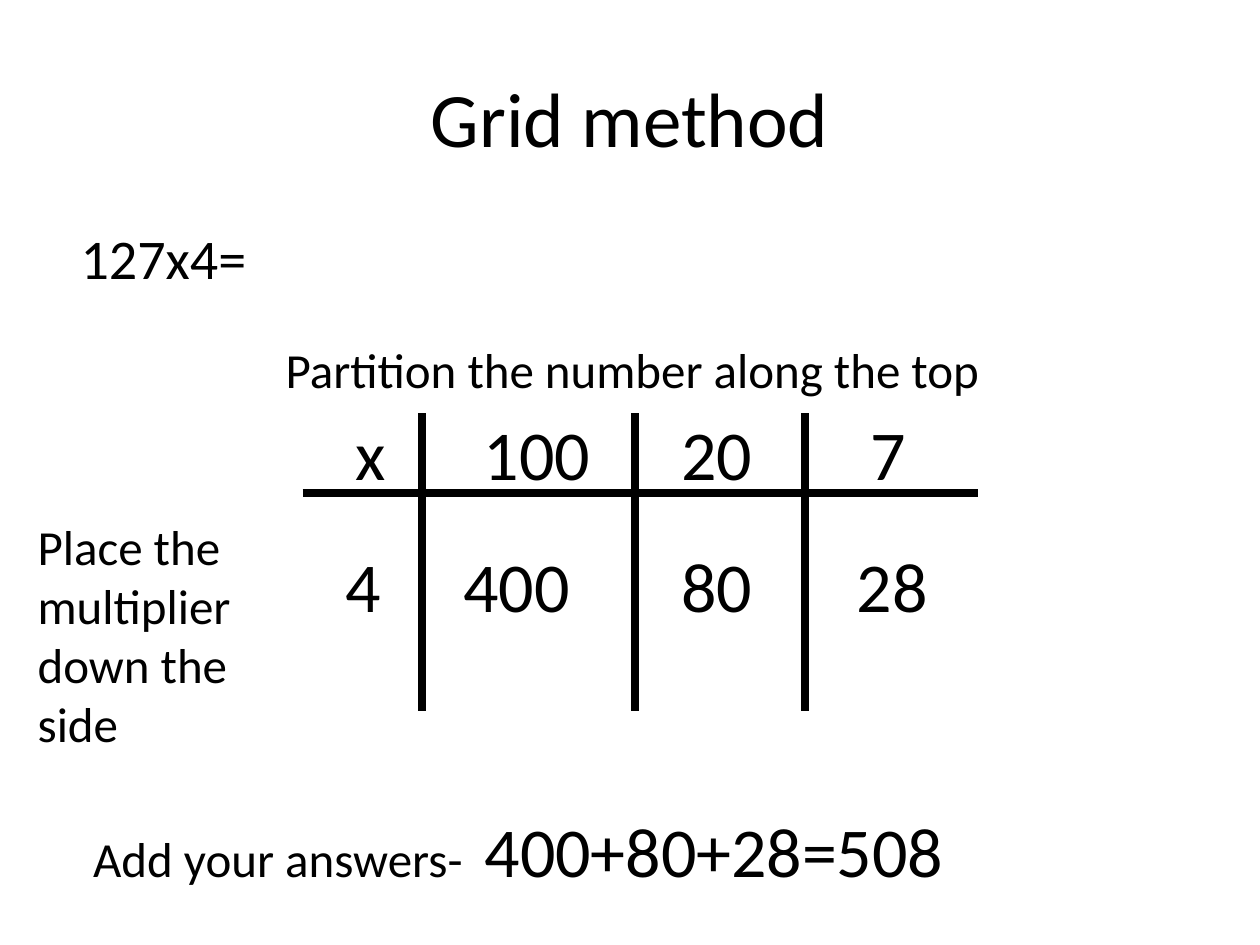
from lxml import etree
from pptx import Presentation
from pptx.dml.color import RGBColor
from pptx.enum.shapes import MSO_CONNECTOR
from pptx.enum.text import MSO_ANCHOR, MSO_AUTO_SIZE, PP_ALIGN
from pptx.oxml.ns import qn
from pptx.util import Cm, Pt

STRAIGHT = MSO_CONNECTOR.STRAIGHT
MIDDLE, TOP = MSO_ANCHOR.MIDDLE, MSO_ANCHOR.TOP
CENTER, LEFT = PP_ALIGN.CENTER, PP_ALIGN.LEFT
NO_FIT, GROW = MSO_AUTO_SIZE.NONE, MSO_AUTO_SIZE.SHAPE_TO_FIT_TEXT
COLOURS = {"ink": "000000", "paper": "FFFFFF"}
FONT = "Calibri"
INK = RGBColor.from_string(COLOURS["ink"])
DIGIT, NOTE = 40, 28


def place(holder, box):
    for side, length in zip(("left", "top", "width", "height"), box):
        setattr(holder, side, Cm(length))


def write(holder, pieces, frame_format, align=LEFT):
    frame = holder.text_frame
    for attribute, value in frame_format.items():
        setattr(frame, attribute, value)
    paragraph = frame.paragraphs[0]
    paragraph.alignment = align
    for words, size in pieces:
        run = paragraph.add_run()
        run.text = words
        for attribute, value in {"name": FONT, "size": Pt(size)}.items():
            setattr(run.font, attribute, value)
        run.font.color.rgb = INK


deck = Presentation()
deck.slide_width, deck.slide_height = Cm(25.4), Cm(19.05)
slide = deck.slides.add_slide(deck.slide_layouts[1])
slide.background.fill.solid()
slide.background.fill.fore_color.rgb = RGBColor.from_string(COLOURS["paper"])

heading, question = slide.placeholders
place(heading, (1.27, 0.76, 22.86, 3.18))
write(heading, [("Grid method", 44)],
      {"vertical_anchor": MIDDLE, "auto_size": NO_FIT}, CENTER)

place(question, (1.37, 4.37, 22.86, 12.57))
write(question, [("127x4=", 32)], {"vertical_anchor": TOP, "auto_size": NO_FIT})
question_format = question.text_frame.paragraphs[0]._p.get_or_add_pPr()
for attribute in ("marL", "indent"):
    question_format.set(attribute, "0")
etree.SubElement(question_format, qn("a:buNone"))

grid_top, grid_bottom, header_line = 8.33, 14.33, 9.93
grid_lines = [(6.1, header_line, 19.71, header_line)]
grid_lines += [(x, grid_top, x, grid_bottom) for x in (8.51, 12.8, 16.23)]
for ends in grid_lines:
    grid_line = slide.shapes.add_connector(STRAIGHT, *map(Cm, ends))
    grid_line.line.color.rgb = INK
    grid_line.line.width = Pt(4.5)
    etree.SubElement(grid_line._element.spPr, qn("a:effectLst"))

header_row, answer_row, row_height = 8.15, 10.82, 1.96
cells = [
    ("x", 6.91, header_row, 1.6),
    ("100", 9.5, header_row, 3.3),
    ("20", 13.49, header_row, 2.18),
    ("7", 17.3, header_row, 1.6),
    ("4", 6.71, answer_row, 1.6),
    ("400", 9.09, answer_row, 3.2),
    ("80", 13.49, answer_row, 2.18),
    ("28", 17.02, answer_row, 2.18),
]
labels = [([(number, DIGIT)], (left, top, width, row_height))
          for number, left, top, width in cells]
labels += [
    ([("Partition the number along the top", NOTE)], (5.51, 6.71, 14.61, 1.45)),
    ([("Place the multiplier down the side", NOTE)], (0.51, 10.29, 4.6, 5.05)),
    ([("Add your answers-  ", NOTE), ("400+80+28=508", DIGIT)],
     (1.63, 16.15, 18.06, row_height)),
]
for pieces, box in labels:
    label = slide.shapes.add_textbox(*map(Cm, box))
    write(label, pieces, {"word_wrap": True, "auto_size": GROW})

deck.save("out.pptx")
